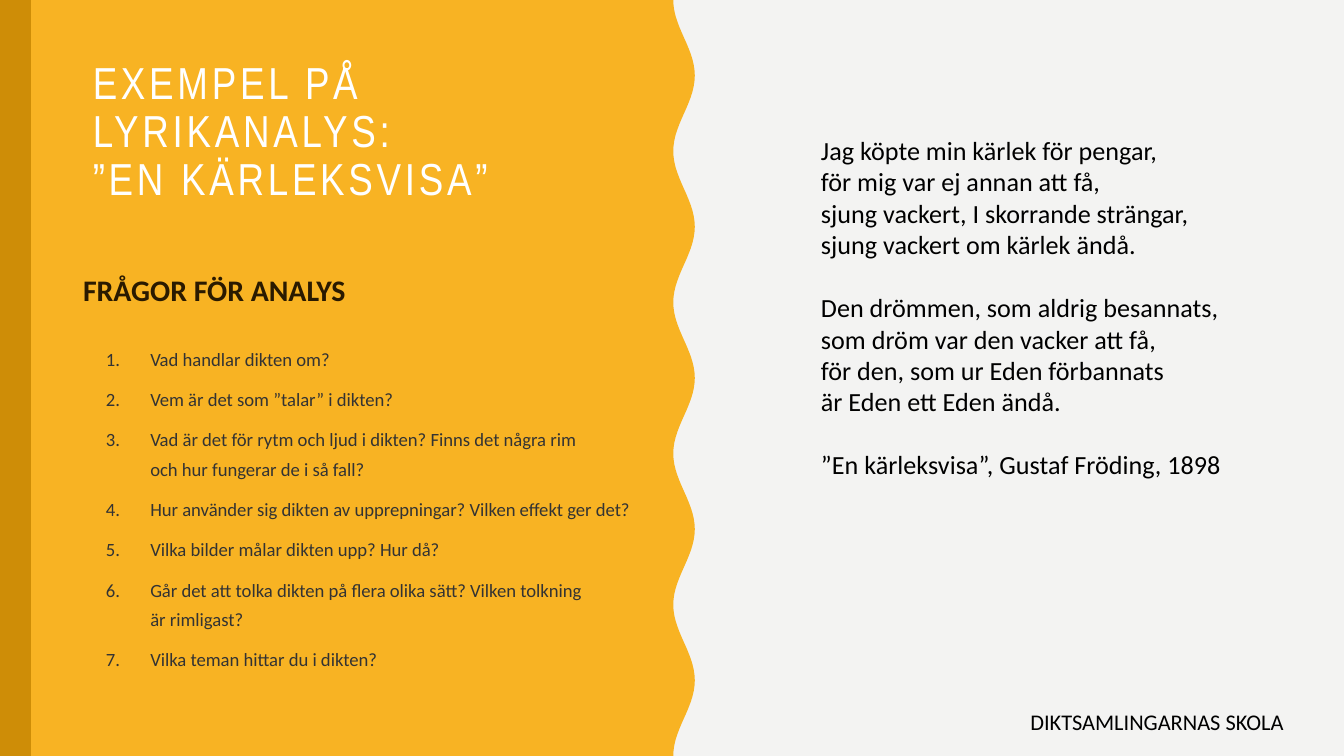
from dataclasses import dataclass
from math import cos, pi

from lxml.etree import SubElement
from pptx import Presentation
from pptx.dml.color import RGBColor
from pptx.enum.shapes import MSO_SHAPE
from pptx.enum.text import MSO_ANCHOR, MSO_AUTO_SIZE, PP_ALIGN
from pptx.oxml.ns import qn
from pptx.util import Inches, Pt

PAPER = RGBColor(0xF3, 0xF3, 0xF2)
AMBER = RGBColor(0xF8, 0xB3, 0x23)
OCHRE = RGBColor(0xCE, 0x8D, 0x07)
BROWN = RGBColor(0x2A, 0x1A, 0x00)
GRAY = RGBColor(0x33, 0x33, 0x33)
BLACK = RGBColor(0, 0, 0)
WHITE = RGBColor(0xFF, 0xFF, 0xFF)

WIDTH = 10
HEIGHT = WIDTH * 9 / 16
TROUGH_X = 5.01
AMPLITUDE = 0.08
WAVE_COUNT = 5
STEPS_PER_WAVE = 28

TITLE = "EXEMPEL PÅ LYRIKANALYS: \n”EN KÄRLEKSVISA”"
HEADING = "FRÅGOR FÖR ANALYS"
QUESTIONS = [
    "Vad handlar dikten om?",
    "Vem är det som ”talar” i dikten?",
    "Vad är det för rytm och ljud i dikten? Finns det några rim \noch hur fungerar de i så fall?",
    "Hur använder sig dikten av upprepningar? Vilken effekt ger det?",
    "Vilka bilder målar dikten upp? Hur då?",
    "Går det att tolka dikten på flera olika sätt? Vilken tolkning \när rimligast?",
    "Vilka teman hittar du i dikten?",
]
STANZAS = [
    [
        "Jag köpte min kärlek för pengar,",
        "för mig var ej annan att få,",
        "sjung vackert, I skorrande strängar,",
        "sjung vackert om kärlek ändå.",
    ],
    [
        "Den drömmen, som aldrig besannats,",
        "som dröm var den vacker att få,",
        "för den, som ur Eden förbannats",
        "är Eden ett Eden ändå.",
    ],
    ["”En kärleksvisa”, Gustaf Fröding, 1898"],
]
SENDER = "DIKTSAMLINGARNAS SKOLA"


@dataclass(frozen=True)
class Box:
    left: float
    top: float
    width: float
    height: float

    def lengths(self):
        return [Inches(v) for v in (self.left, self.top, self.width, self.height)]


def paint(shape, color: RGBColor) -> None:
    shape.fill.solid()
    shape.fill.fore_color.rgb = color
    shape.line.fill.background()
    shape.shadow.inherit = False


def write(frame, text: str, *, size: float, color: RGBColor, font="Calibri",
          bold=False, align=PP_ALIGN.LEFT, line_spacing=1.0, before=0, after=0,
          tracking=0, numbered=False) -> None:
    paragraph = frame.paragraphs[0]
    if paragraph.runs:
        paragraph = frame.add_paragraph()
    paragraph.alignment = align
    paragraph.line_spacing = line_spacing
    paragraph.space_before = Pt(before)
    paragraph.space_after = Pt(after)
    for index, line in enumerate(text.split("\n")):
        if index:
            paragraph.add_line_break()
        run = paragraph.add_run()
        run.text = line
        run.font.name = font
        run.font.size = Pt(size)
        run.font.bold = bold
        run.font.color.rgb = color
        if tracking:
            run._r.get_or_add_rPr().set("spc", str(tracking * 100))
    if numbered:
        properties = paragraph._p.get_or_add_pPr()
        properties.set("marL", str(Inches(0.5)))
        properties.set("indent", str(Inches(-0.33)))
        bullet_color = SubElement(properties, qn("a:buClr"))
        SubElement(bullet_color, qn("a:srgbClr")).set("val", str(color))
        SubElement(properties, qn("a:buFont")).set("typeface", font)
        SubElement(properties, qn("a:buAutoNum")).set("type", "arabicPeriod")


def add_frame(slide, box: Box, inset_y=0.1, anchor=MSO_ANCHOR.TOP):
    frame = slide.shapes.add_textbox(*box.lengths()).text_frame
    frame.word_wrap = True
    frame.vertical_anchor = anchor
    frame.margin_left = frame.margin_right = Inches(0.1)
    frame.margin_top = frame.margin_bottom = Inches(inset_y)
    return frame


def add_wave_panel(slide) -> None:
    steps = WAVE_COUNT * STEPS_PER_WAVE
    edge = [
        (Inches(TROUGH_X + AMPLITUDE * (1 - cos(2 * pi * step / STEPS_PER_WAVE))),
         Inches(HEIGHT * step / steps))
        for step in range(steps + 1)
    ]
    builder = slide.shapes.build_freeform(0, 0, scale=1.0)
    builder.add_line_segments(edge + [(0, Inches(HEIGHT))], close=True)
    paint(builder.convert_to_shape(), AMBER)


def place_title(slide) -> None:
    title = slide.shapes.title
    title._element.getparent().append(title._element)
    title.left, title.top, title.width, title.height = Box(0.59, -0.22, 3.88, 2.42).lengths()
    frame = title.text_frame
    frame.word_wrap = True
    frame.auto_size = MSO_AUTO_SIZE.NONE
    frame.vertical_anchor = MSO_ANCHOR.MIDDLE
    write(frame, TITLE, size=24, color=WHITE, font="Arial Narrow",
          line_spacing=0.9, tracking=2)


def main() -> None:
    presentation = Presentation()
    presentation.slide_width = Inches(WIDTH)
    presentation.slide_height = Inches(HEIGHT)
    slide = presentation.slides.add_slide(presentation.slide_layouts[5])
    slide.background.fill.solid()
    slide.background.fill.fore_color.rgb = PAPER

    add_wave_panel(slide)
    place_title(slide)
    side_band = slide.shapes.add_shape(
        MSO_SHAPE.RECTANGLE, *Box(0, 0, 0.23, HEIGHT).lengths())
    paint(side_band, OCHRE)

    analysis = add_frame(slide, Box(0.52, 1.92, 5.24, 3.7))
    write(analysis, HEADING, size=16, color=BROWN, bold=True, after=18)
    for question in QUESTIONS:
        write(analysis, question, size=10, color=GRAY, line_spacing=1.3,
              after=6, numbered=True)

    poem = add_frame(slide, Box(6.01, 0.95, 3.99, 2.69), inset_y=0.05)
    for stanza_index, stanza in enumerate(STANZAS):
        for verse_index, verse in enumerate(stanza):
            opens_stanza = stanza_index > 0 and verse_index == 0
            write(poem, verse, size=14, color=BLACK, before=17 if opens_stanza else 0)

    sender = add_frame(slide, Box(7.23, 5.12, 2.76, 0.5), anchor=MSO_ANCHOR.MIDDLE)
    write(sender, SENDER, size=12, color=BLACK, align=PP_ALIGN.CENTER, after=6)

    presentation.save("out.pptx")


if __name__ == "__main__":
    main()
